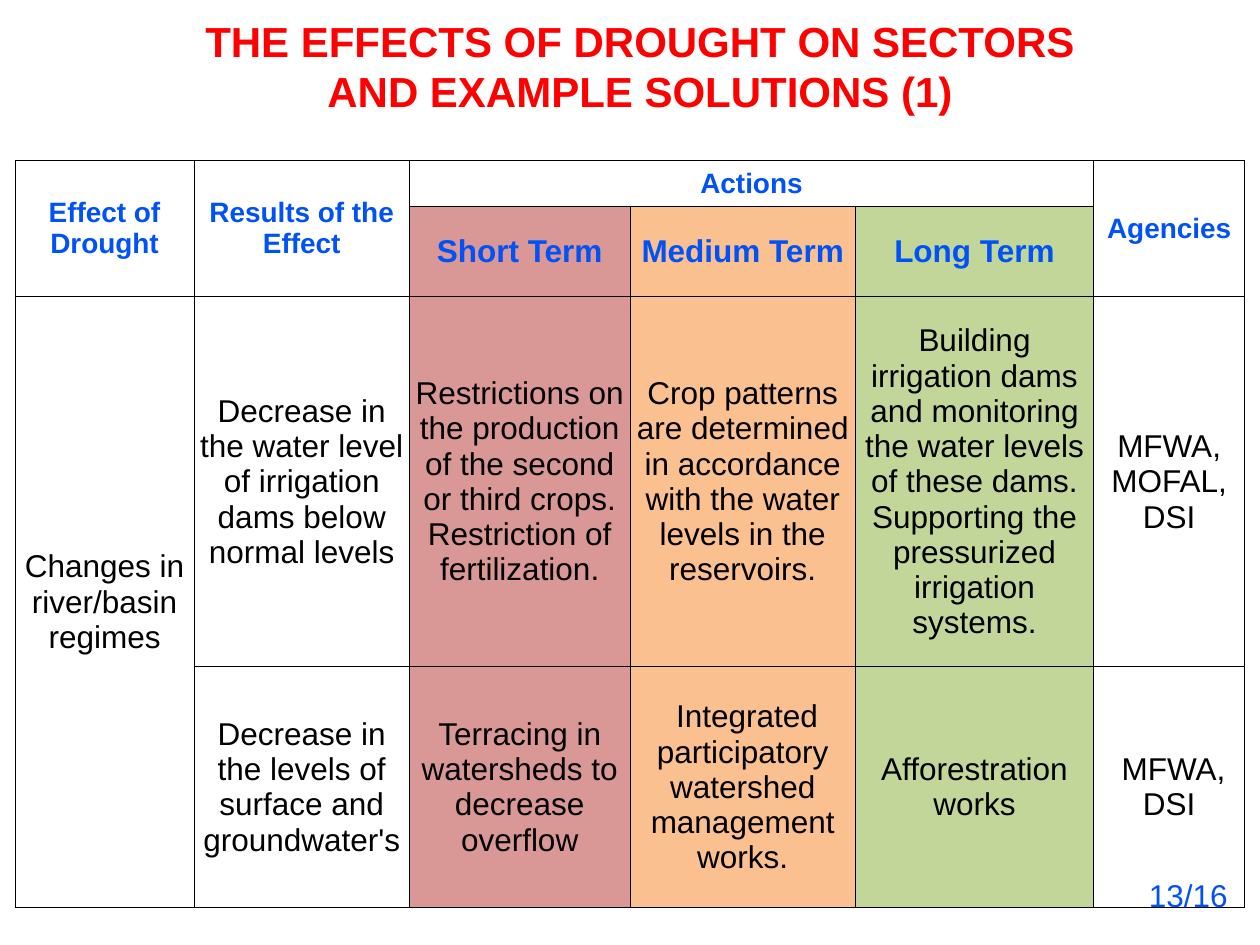
import pptx
import pptx.util
import pptx.dml.color
import pptx.enum.text
import pptx.oxml.ns
import lxml.etree

Inches = pptx.util.Inches
Pt = pptx.util.Pt
Align = pptx.enum.text.PP_ALIGN
Anchor = pptx.enum.text.MSO_ANCHOR

THEME = {
    "font": "Arial",
    "red": "FF0000", "blue": "0052F6", "black": "000000", "white": "FFFFFF",
    "title_size": 24, "heading_size": 16, "body_size": 18,
    "border_width": 0.5,
    "column_fills": {2: "D99795", 3: "FAC090", 4: "C2D69A"},
}

TITLE = "THE EFFECTS OF DROUGHT ON SECTORS AND EXAMPLE SOLUTIONS (1)"
PAGE_NUMBER = "13/16"
ROWS = [
    ["Effect of Drought", "Results of the Effect", "Actions", None, None, "Agencies"],
    [None, None, "Short Term", "Medium Term", "Long Term", None],
    [
        "Changes in river/basin regimes",
        "Decrease in the water level of irrigation dams below normal levels",
        "Restrictions on the production of the second or third crops. Restriction of fertilization.",
        "Crop patterns are determined in accordance with the water levels in the reservoirs.",
        "Building irrigation dams and monitoring the water levels of these dams. "
        "Supporting the pressurized irrigation systems.",
        "MFWA, MOFAL, DSI",
    ],
    [
        None,
        "Decrease in the levels of surface and groundwater's",
        "Terracing in watersheds to decrease overflow",
        " Integrated participatory watershed management works.",
        "Afforestration works",
        " MFWA, DSI",
    ],
]
MERGES = [((0, 0), (1, 0)), ((0, 1), (1, 1)), ((0, 2), (0, 4)), ((0, 5), (1, 5)), ((2, 0), (3, 0))]
COLUMN_WIDTHS = [1.42, 1.71, 1.75, 1.79, 1.89, 1.2]
ROW_HEIGHTS = [0.37, 0.71, 2.94, 1.91]


def color(name):
    return pptx.dml.color.RGBColor.from_string(name)


def write(frame, text, size, ink, bold=False, align=Align.CENTER):
    paragraph = frame.paragraphs[0]
    paragraph.alignment = align
    run = paragraph.add_run()
    run.text = text
    run.font.name = THEME["font"]
    run.font.size = Pt(size)
    run.font.bold = bold
    run.font.color.rgb = color(ink)


def add_borders(cell):
    properties = cell._tc.get_or_add_tcPr()
    for side in ("lnL", "lnR", "lnT", "lnB"):
        line = lxml.etree.SubElement(properties, pptx.oxml.ns.qn("a:" + side))
        line.set("w", str(Pt(THEME["border_width"])))
        fill = lxml.etree.SubElement(line, pptx.oxml.ns.qn("a:solidFill"))
        lxml.etree.SubElement(fill, pptx.oxml.ns.qn("a:srgbClr")).set("val", THEME["black"])


def add_actions_table(slide):
    frame = slide.shapes.add_table(
        len(ROWS), len(COLUMN_WIDTHS), Inches(0.12), Inches(1.27),
        Inches(sum(COLUMN_WIDTHS)), Inches(sum(ROW_HEIGHTS)))
    table = frame.table
    table.first_row = False
    table.horz_banding = False
    for column, width in zip(table.columns, COLUMN_WIDTHS):
        column.width = Inches(width)
    for row, height in zip(table.rows, ROW_HEIGHTS):
        row.height = Inches(height)
    for first, last in MERGES:
        table.cell(*first).merge(table.cell(*last))

    for row_index, texts in enumerate(ROWS):
        is_heading = row_index < 2
        size = THEME["heading_size"] if row_index == 0 else THEME["body_size"]
        ink = THEME["blue"] if is_heading else THEME["black"]
        for column_index, text in enumerate(texts):
            cell = table.cell(row_index, column_index)
            add_borders(cell)
            cell.fill.solid()
            fill = THEME["white"] if row_index == 0 else THEME["column_fills"].get(column_index, THEME["white"])
            cell.fill.fore_color.rgb = color(fill)
            cell.vertical_anchor = Anchor.MIDDLE
            cell.margin_left = cell.margin_right = cell.margin_top = Inches(0.01)
            cell.margin_bottom = 0
            if text:
                write(cell.text_frame, text, size, ink, is_heading)


def add_title(slide):
    title = slide.shapes.title
    title.left, title.top, title.width, title.height = map(Inches, (1.46, 0.07, 7.24, 1.16))
    title.text_frame.auto_size = pptx.enum.text.MSO_AUTO_SIZE.NONE
    title.text_frame.vertical_anchor = Anchor.TOP
    write(title.text_frame, TITLE, THEME["title_size"], THEME["red"], True)


def add_page_number(slide):
    box = slide.shapes.add_textbox(*map(Inches, (9.02, 6.9, 0.98, 0.4)))
    box.text_frame.word_wrap = True
    write(box.text_frame, PAGE_NUMBER, THEME["body_size"], THEME["blue"], align=Align.LEFT)


def main():
    presentation = pptx.Presentation()
    presentation.slide_width = Inches(10)
    presentation.slide_height = Inches(7.5)
    slide = presentation.slides.add_slide(presentation.slide_layouts[5])
    add_actions_table(slide)
    add_title(slide)
    add_page_number(slide)
    presentation.save("out.pptx")


if __name__ == "__main__":
    main()
